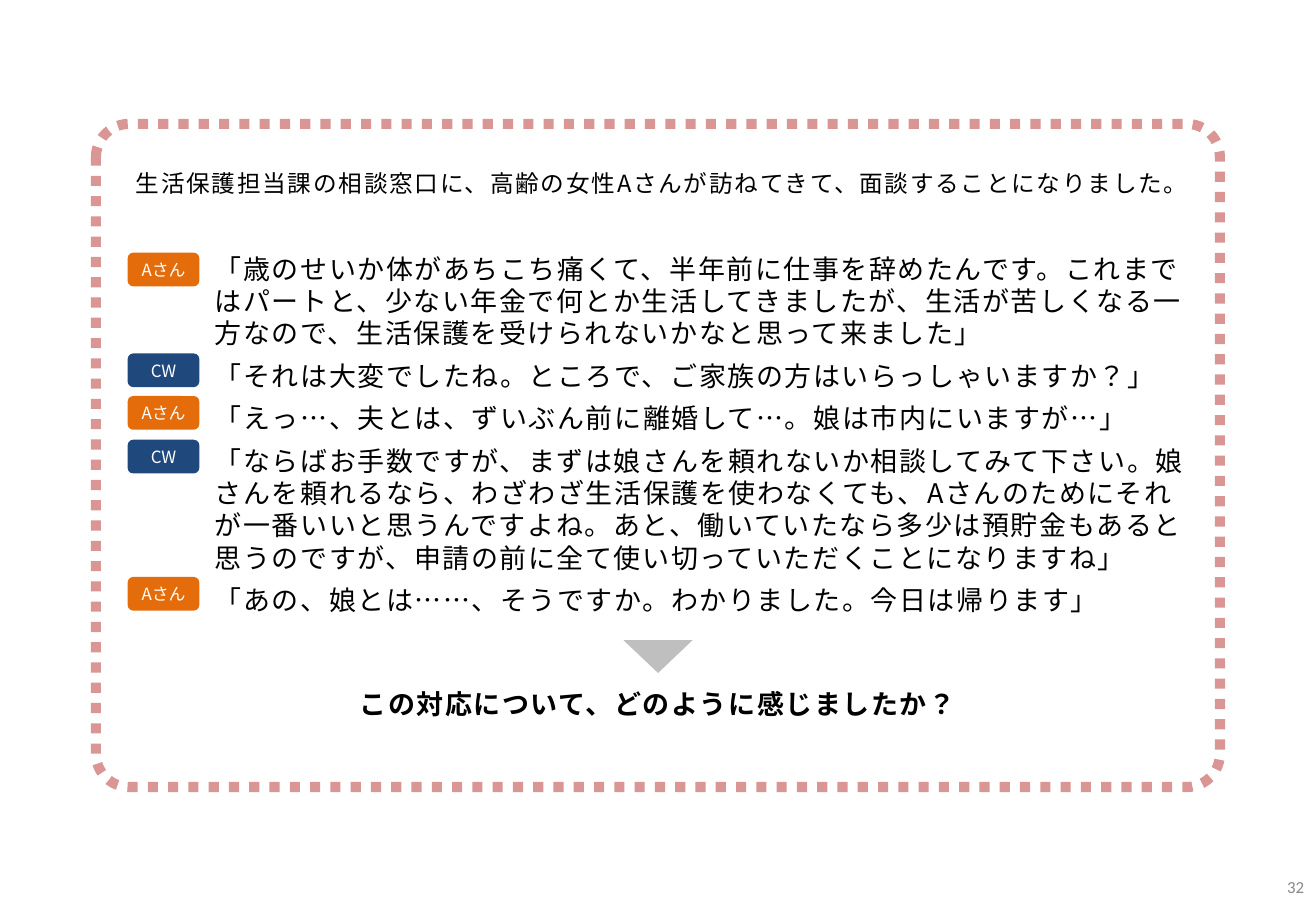
from dataclasses import dataclass

from lxml.etree import SubElement
from pptx import Presentation
from pptx.dml.color import RGBColor as RGB
from pptx.enum.dml import MSO_LINE as Dash
from pptx.enum.shapes import MSO_SHAPE as Shape
from pptx.enum.text import MSO_ANCHOR as Anchor, PP_ALIGN as Align
from pptx.oxml.ns import qn
from pptx.util import Inches, Pt


@dataclass(frozen=True)
class Theme:
    font: str = "Noto Sans CJK JP"
    number_font: str = "Calibri"
    ink: str = "000000"
    white: str = "FFFFFF"
    visitor: str = "E46C0A"
    caseworker: str = "1F497D"
    arrow: str = "BFBFBF"
    frame: str = "D99694"
    number: str = "898989"
    small: int = 10
    intro: int = 14
    body: int = 16
    line_pitch: float = 19.15
    turn_gap: int = 6
    tracking: int = 100


THEME = Theme()
WIDTH, HEIGHT = Inches(10.83), Inches(7.5)
COLUMNS = ROWS = 100

VISITOR = ("Aさん", THEME.visitor)
CASEWORKER = ("CW", THEME.caseworker)
INTRO = "生活保護担当課の相談窓口に、高齢の女性Aさんが訪ねてきて、面談することになりました。"
QUESTION = "この対応について、どのように感じましたか？"

# Speaker, row of the name badge, words
DIALOGUE = [
    (VISITOR, 27.73,
     "「歳のせいか体があちこち痛くて、半年前に仕事を辞めたんです。これまではパートと、"
     "少ない年金で何とか生活してきましたが、生活が苦しくなる一方なので、"
     "生活保護を受けられないかなと思って来ました」"),
    (CASEWORKER, 38.8,
     "「それは大変でしたね。ところで、ご家族の方はいらっしゃいますか？」"),
    (VISITOR, 43.47,
     "「えっ…、夫とは、ずいぶん前に離婚して…。娘は市内にいますが…」"),
    (CASEWORKER, 48.27,
     "「ならばお手数ですが、まずは娘さんを頼れないか相談してみて下さい。"
     "娘さんを頼れるなら、わざわざ生活保護を使わなくても、Aさんのためにそれが"
     "一番いいと思うんですよね。あと、働いていたなら多少は預貯金もあると思うのですが、"
     "申請の前に全て使い切っていただくことになりますね」"),
    (VISITOR, 63.33,
     "「あの、娘とは……、そうですか。わかりました。今日は帰ります」"),
]


def cells(column, row, columns, rows):
    """Turn grid columns and rows into left, top, width and height."""
    across, down = WIDTH / COLUMNS, HEIGHT / ROWS
    return (round(column * across), round(row * down),
            round(columns * across), round(rows * down))


def style(paragraph, size, color, font=THEME.font, bold=False, tracking=0):
    for run in paragraph.runs:
        run.font.size = Pt(size)
        run.font.bold = bold
        run.font.name = font
        run.font.color.rgb = RGB.from_string(color)
        properties = run.font._element
        SubElement(properties, qn("a:ea")).set("typeface", font)
        properties.set("lang", "ja-JP")
        if tracking:
            properties.set("spc", str(tracking))


def add_line(slide, area, text, size, color, align=Align.LEFT, **look):
    frame = slide.shapes.add_textbox(*cells(*area)).text_frame
    frame.word_wrap = True
    frame.vertical_anchor = Anchor.MIDDLE
    frame.text = text
    line = frame.paragraphs[0]
    line.alignment = align
    style(line, size, color, **look)


def add_dialogue(slide, area, turns):
    frame = slide.shapes.add_textbox(*cells(*area)).text_frame
    frame.word_wrap = True
    frame.margin_right = 0
    frame.text = "\n".join(turns)
    for index, turn in enumerate(frame.paragraphs):
        turn.line_spacing = Pt(THEME.line_pitch)
        turn.space_before = Pt(THEME.turn_gap if index else 0)
        style(turn, THEME.body, THEME.ink, tracking=THEME.tracking)


def add_solid(slide, preset, area, color):
    solid = slide.shapes.add_shape(preset, *cells(*area))
    solid.shadow.inherit = False
    solid.fill.solid()
    solid.fill.fore_color.rgb = RGB.from_string(color)
    solid.line.fill.background()
    return solid


def add_badge(slide, row, name, color):
    badge = add_solid(slide, Shape.ROUNDED_RECTANGLE, (9.7, row, 5.45, 3.7), color)
    frame = badge.text_frame
    frame.margin_left = frame.margin_right = 0
    frame.vertical_anchor = Anchor.MIDDLE
    frame.text = name
    frame.paragraphs[0].alignment = Align.CENTER
    style(frame.paragraphs[0], THEME.small, THEME.white)


def add_dotted_frame(slide, area):
    border = slide.shapes.add_shape(Shape.ROUNDED_RECTANGLE, *cells(*area))
    border.shadow.inherit = False
    border.adjustments[0] = 0.05
    border.fill.background()
    border.line.color.rgb = RGB.from_string(THEME.frame)
    border.line.width = Pt(6)
    border.line.dash_style = Dash.ROUND_DOT


def main():
    deck = Presentation()
    deck.slide_width, deck.slide_height = WIDTH, HEIGHT
    slide = deck.slides.add_slide(deck.slide_layouts[6])

    # Page number and scene
    add_line(slide, (96.2, 94.67, 3.8, 5.33), "32", THEME.small, THEME.number,
             Align.RIGHT, font=THEME.number_font)
    add_line(slide, (9.42, 17.47, 83.1, 5.33), INTRO, THEME.intro, THEME.ink,
             tracking=THEME.tracking)

    # Conversation with a badge for each speaker
    add_dialogue(slide, (15.42, 27.07, 75.62, 41.73),
                 [words for _, _, words in DIALOGUE])
    for (name, color), row, _ in DIALOGUE:
        add_badge(slide, row, name, color)

    # Arrow down to the question
    arrow = add_solid(slide, Shape.ISOSCELES_TRIANGLE, (47.37, 70.27, 5.26, 3.6),
                      THEME.arrow)
    arrow.rotation = 180
    add_line(slide, (7.48, 74.53, 85.04, 5.33), QUESTION, THEME.body, THEME.ink,
             Align.CENTER, bold=True, tracking=THEME.tracking)

    # Dotted border around the case
    add_dotted_frame(slide, (7.29, 13.6, 85.41, 72.8))

    deck.save("out.pptx")


if __name__ == "__main__":
    main()
